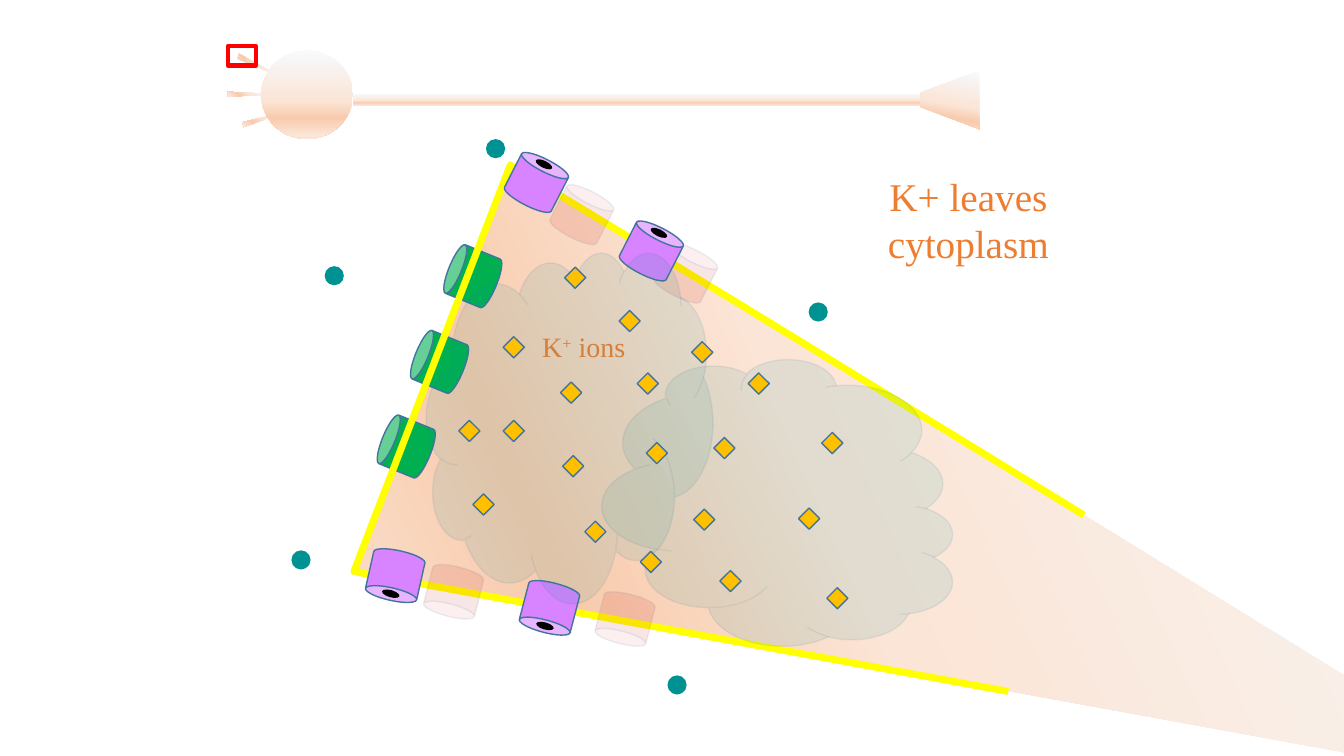
from pptx import Presentation
from pptx.dml.color import RGBColor
from pptx.enum.shapes import MSO_CONNECTOR, MSO_SHAPE
from pptx.enum.text import MSO_ANCHOR, MSO_AUTO_SIZE, PP_ALIGN
from pptx.oxml.ns import qn
from pptx.util import Inches, Pt
from lxml import etree

TRIANGLE, TRAPEZOID = MSO_SHAPE.ISOSCELES_TRIANGLE, MSO_SHAPE.TRAPEZOID
OVAL, BAR = MSO_SHAPE.OVAL, MSO_SHAPE.RECTANGLE
CAN, CLOUD, DIAMOND = MSO_SHAPE.CAN, MSO_SHAPE.CLOUD, MSO_SHAPE.DIAMOND
STRAIGHT = MSO_CONNECTOR.STRAIGHT

COLORS = {
    "teal": "009193",
    "green": "00B050",
    "violet": "D883FF",
    "dark_red": "C00000",
    "outline": "43739E",
    "membrane": "FFFF00",
    "marker": "FF0000",
    "pore": "000000",
    "ion": "FFC000",
    "text": "ED7D31",
}
CELL_STOPS = [(0, "F7FAFD"), (57, "FBE5D6"), (76, "F8CBAD"), (96, "FBE5D6")]
FONT = "Times New Roman"


def add_solid(kind, place, fill, line=None, rotation=0, opacity=100):
    """Add a preset shape in one colour; opacity applies to fill and line."""
    shape = deck_slide.shapes.add_shape(kind, *map(Inches, place))
    shape.shadow.inherit = False
    shape.rotation = rotation
    shape.fill.solid()
    shape.fill.fore_color.rgb = RGBColor.from_string(COLORS[fill])
    if line:
        shape.line.color.rgb = RGBColor.from_string(COLORS[line])
        shape.line.width = Pt(1)
    else:
        shape.line.fill.background()
    if opacity < 100:
        for color in shape._element.spPr.iter(qn("a:srgbClr")):
            etree.SubElement(color, qn("a:alpha")).set("val", str(opacity * 1000))
    return shape


def add_spans(para, spans, size):
    """Fill a centred paragraph with (text, is superscript) spans."""
    para.alignment = PP_ALIGN.CENTER
    para.line_spacing = 1.0
    para.space_before = Pt(0)
    for text, raised in spans:
        span = para.add_run()
        span.text = text
        span.font.name = FONT
        span.font.size = Pt(size)
        span.font.color.rgb = RGBColor.from_string(COLORS["text"])
        if raised:
            span.font._element.set("baseline", "30000")


deck = Presentation()
deck.slide_width, deck.slide_height = Inches(13.33), Inches(7.5)
deck_slide = deck.slides.add_slide(deck.slide_layouts[5])

# Title
title = deck_slide.shapes.title
title.left, title.top, title.width, title.height = map(Inches, (7.9, 1.66, 3.41, 1.04))
frame = title.text_frame
frame.word_wrap = True
frame.auto_size = MSO_AUTO_SIZE.SHAPE_TO_FIT_TEXT
frame.vertical_anchor = MSO_ANCHOR.TOP
add_spans(frame.paragraphs[0], [("K+ leaves", False)], 28)
add_spans(frame.add_paragraph(), [("cytoplasm", False)], 28)

# Enlarged dendrite, then the small neuron: dendrites, soma, axon, terminal
cell_parts = [
    (TRIANGLE, (7.51, -0.08, 4.35, 11.58), 111, 45),
    (TRIANGLE, (2.56, 0.42, 0.05, 0.49), 116, 45),
    (TRIANGLE, (2.48, 0.69, 0.05, 0.49), 90, 45),
    (TRIANGLE, (2.62, 0.92, 0.05, 0.49), 73, 45),
    (OVAL, (2.59, 0.5, 0.91, 0.88), 0, 90),
    (BAR, (3.5, 0.93, 5.64, 0.12), 0, 90),
    (TRAPEZOID, (9.13, 0.7, 0.58, 0.58), 270, 190),
]
for kind, place, rotation, angle in cell_parts:
    part = add_solid(kind, place, "text", rotation=rotation)
    if kind == TRAPEZOID:
        part.adjustments[0] = 0.377
    part.fill.gradient()
    gradient = part._element.spPr.find(qn("a:gradFill"))
    stops = gradient.find(qn("a:gsLst"))
    stops.clear()
    for position, color in CELL_STOPS:
        stop = etree.SubElement(stops, qn("a:gs"), pos=str(position * 1000))
        etree.SubElement(stop, qn("a:srgbClr"), val=color)
    gradient.find(qn("a:lin")).set("ang", str(angle * 60000))

zoom_marker = add_solid(BAR, (2.26, 0.46, 0.28, 0.19), "marker", "marker")
zoom_marker.fill.background()
zoom_marker.line.width = Pt(3)

# Ions outside the cell
for left, top in [(3.22, 2.64), (4.82, 1.38), (2.89, 5.46), (6.62, 6.7), (8.02, 3)]:
    add_solid(OVAL, (left, top, 0.19, 0.19), "teal")

# Receptors behind the membrane
for left, top in [(4.1, 3.34), (4.43, 2.49), (3.77, 4.18)]:
    add_solid(CAN, (left, top, 0.52, 0.5), "green", "outline", 292.3)

# Membrane
corners = [(Inches(x), Inches(y))
           for x, y in [(7.29, 2.99), (5.06, 1.64), (3.51, 5.67), (6.67, 6.25)]]
builder = deck_slide.shapes.build_freeform(*corners[0], scale=1.0)
builder.add_line_segments(corners[1:], close=False)
membrane = builder.convert_to_shape()
membrane.shadow.inherit = False
membrane.fill.background()
membrane.line.color.rgb = RGBColor.from_string(COLORS["membrane"])
membrane.line.width = Pt(5)

# Faint channels
for left, top, rotation in [(5.51, 1.88, 27), (6.54, 2.46, 27),
                            (5.94, 5.89, 194.2), (4.24, 5.62, 194.2)]:
    add_solid(CAN, (left, top, 0.52, 0.5), "dark_red", "outline", rotation, 10)

for ends in [(6.67, 6.25, 10, 6.86), (7.29, 2.99, 10.75, 5.11)]:
    extension = deck_slide.shapes.add_connector(STRAIGHT, *map(Inches, ends))
    extension.line.color.rgb = RGBColor.from_string(COLORS["membrane"])
    extension.line.width = Pt(5)
    etree.SubElement(extension._element.spPr, qn("a:effectLst"))

# Open channels
for left, top, rotation in [(5.06, 1.56, 27), (6.2, 2.24, 27),
                            (3.66, 5.46, 192.6), (5.19, 5.78, 194.6)]:
    add_solid(CAN, (left, top, 0.52, 0.5), "violet", "outline", rotation)

add_solid(CLOUD, (6.3, 3.25, 2.84, 3.48), "teal", "outline", 90, 10)

for left, top, rotation in [(5.36, 1.54, 116), (6.5, 2.22, 116),
                            (5.37, 6.12, 106), (3.84, 5.8, 106)]:
    add_solid(OVAL, (left, top, 0.07, 0.18), "pore", rotation=rotation)

# Potassium label, under the second cloud
label = deck_slide.shapes.add_textbox(*map(Inches, (5.16, 3.22, 1.26, 0.44)))
label.text_frame.word_wrap = True
label.text_frame.auto_size = MSO_AUTO_SIZE.SHAPE_TO_FIT_TEXT
add_spans(label.text_frame.paragraphs[0],
          [("K", False), ("+", True), (" ions", False)], 20)

add_solid(CLOUD, (4.23, 2.5, 2.84, 3.48), "teal", "outline", opacity=10)

# Potassium ions
potassium_ions = [
    (6.32, 3.7), (5.6, 2.65), (4.99, 3.34), (6.14, 3.08), (5.56, 3.79),
    (4.99, 4.17), (5.58, 4.52), (6.41, 4.39), (4.69, 4.9), (5.8, 5.17),
    (6.35, 5.47), (6.86, 3.39), (7.14, 5.66), (7.92, 5.04), (4.55, 4.17),
    (7.08, 4.34), (7.42, 3.7), (6.88, 5.05), (8.2, 5.83), (8.15, 4.29),
]
for left, top in potassium_ions:
    add_solid(DIAMOND, (left, top, 0.21, 0.21), "ion", "outline")

deck.save("out.pptx")
